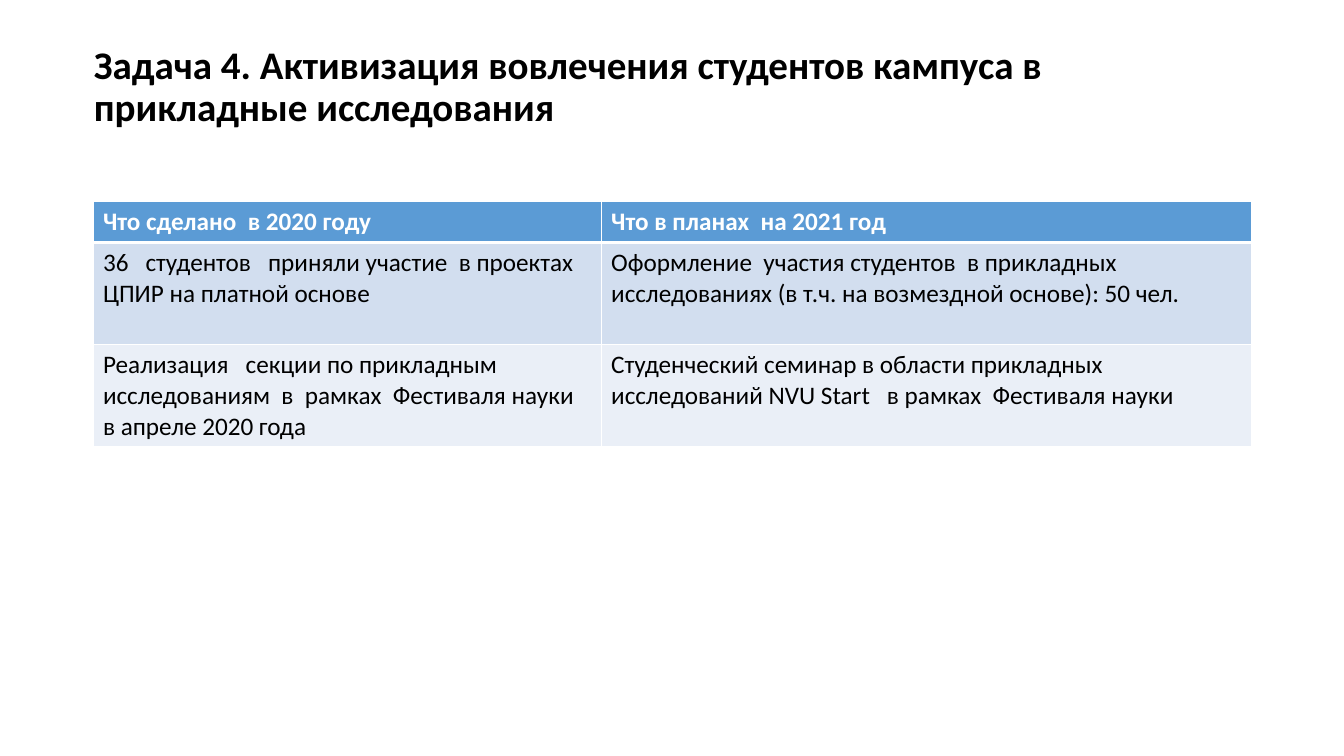
from lxml import etree
from pptx import Presentation
from pptx import util as u
from pptx.dml import color
from pptx.enum import text
from pptx.oxml import ns

FONT = "Calibri"
COLORS = {
    "black": "000000",
    "white": "FFFFFF",
    "header": "5B9BD5",
    "odd": "D2DEEF",
    "even": "EAEFF7",
}
TITLE = "Задача 4. Активизация вовлечения студентов кампуса в прикладные исследования"
ROWS = [
    ("Что сделано  в 2020 году", "Что в планах  на 2021 год"),
    (
        "36   студентов   приняли участие  в проектах  ЦПИР на платной основе",
        "Оформление  участия студентов  в прикладных исследованиях "
        "(в т.ч. на возмездной основе): 50 чел.",
    ),
    (
        "Реализация   секции по прикладным исследованиям  в  рамках  "
        "Фестиваля науки в апреле 2020 года",
        "Студенческий семинар в области прикладных исследований "
        "NVU Start   в рамках  Фестиваля науки",
    ),
]


def rgb(name):
    """Return the named colour."""
    return color.RGBColor.from_string(COLORS[name])


def write(frame, words, size=18, ink="black", bold=False, spacing=1.0):
    """Write one formatted paragraph into a text frame."""
    frame.word_wrap = True
    para = frame.paragraphs[0]
    para.line_spacing = spacing
    span = para.add_run()
    span.text = words
    span.font.name = FONT
    span.font.size = u.Pt(size)
    span.font.bold = bold
    span.font.color.rgb = rgb(ink)


def set_borders(cell, widths):
    """Draw white borders on a cell; widths maps L, R, T, B to points."""
    properties = cell._tc.get_or_add_tcPr()
    for side, width in widths.items():
        line = etree.SubElement(properties, ns.qn(f"a:ln{side}"), w=str(u.Pt(width)))
        fill = etree.SubElement(line, ns.qn("a:solidFill"))
        etree.SubElement(fill, ns.qn("a:srgbClr"), val=COLORS["white"])


def add_title(page, left, top, width, height):
    """Place the slide title in the given box."""
    box = page.shapes.add_textbox(*map(u.Pt, (left, top, width, height)))
    box.text_frame.vertical_anchor = text.MSO_ANCHOR.TOP
    write(box.text_frame, TITLE, size=27.9, bold=True, spacing=0.9)


def add_plan_table(page, left, top, width, height):
    """Place the table of results and plans in the given box."""
    frame = page.shapes.add_table(
        len(ROWS), len(ROWS[0]), *map(u.Pt, (left, top, width, height))
    )
    table = frame.table
    first_width = 363
    header_height = 29.2
    for column, size in zip(table.columns, (first_width, width - first_width)):
        column.width = u.Pt(size)
    body_height = (height - header_height) / (len(ROWS) - 1)
    for index, words in enumerate(ROWS):
        header = index == 0
        table.rows[index].height = u.Pt(header_height if header else body_height)
        fill = "header" if header else ("odd" if index % 2 else "even")
        for cell, entry in zip(table.rows[index].cells, words):
            set_borders(
                cell,
                {"L": 1, "R": 1, "T": 3 if index == 1 else 1, "B": 3 if header else 1},
            )
            cell.fill.solid()
            cell.fill.fore_color.rgb = rgb(fill)
            write(cell.text_frame, entry, ink="white" if header else "black", bold=header)


def main():
    """Build and save the slide."""
    deck = Presentation()
    deck.slide_width, deck.slide_height = u.Pt(960), u.Pt(540)
    page = deck.slides.add_slide(deck.slide_layouts[6])
    add_title(page, 60, 29, 828, 70)
    add_plan_table(page, 66.4, 144, 828, 175.2)
    deck.save("out.pptx")


if __name__ == "__main__":
    main()
